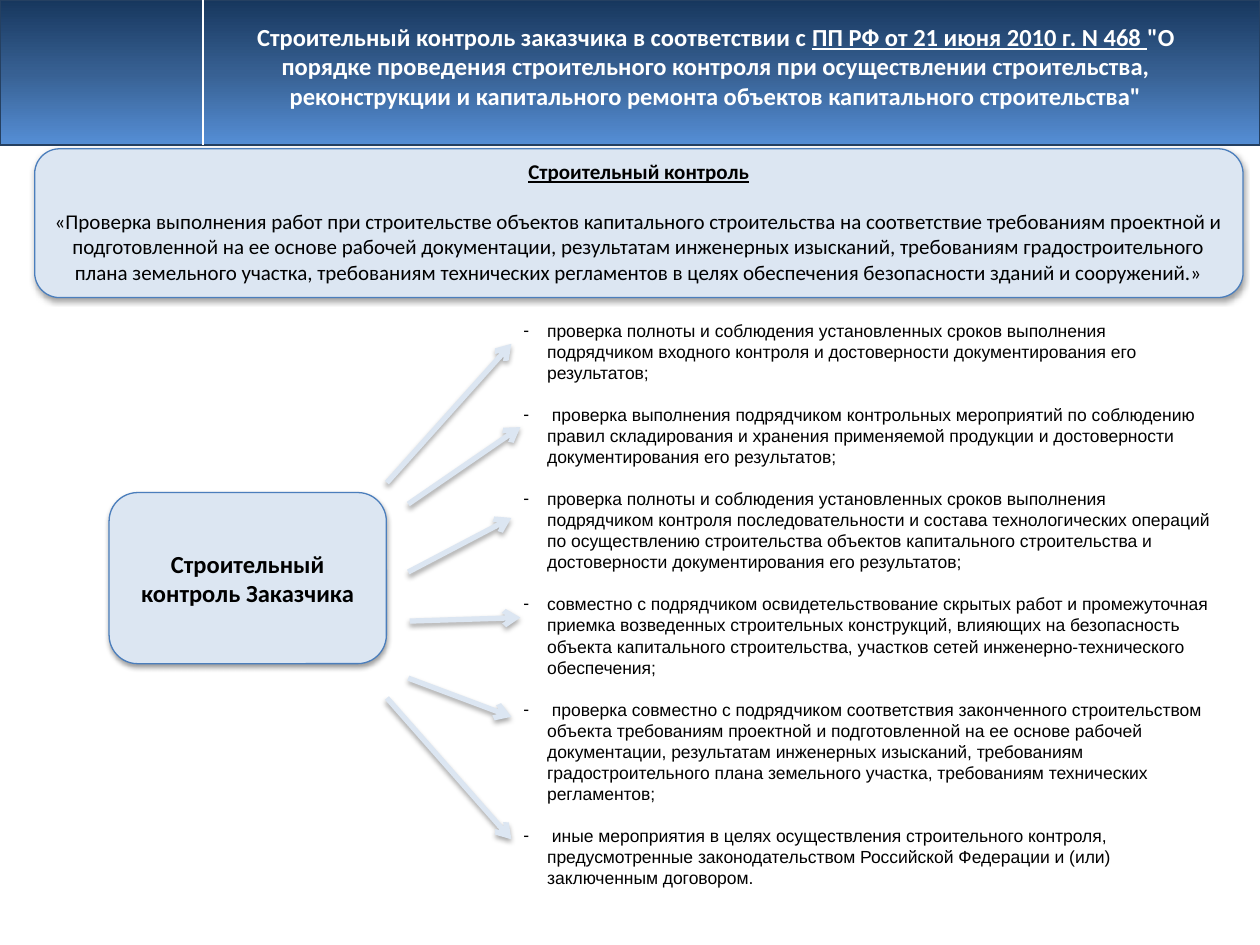
from lxml import etree
from pptx import Presentation
from pptx import util as u
from pptx.dml.color import RGBColor
from pptx.enum import shapes, text
from pptx.oxml import ns, parse_xml

COLORS = {
    "top": "17375E", "middle": "376092", "bottom": "558ED5", "edge": "254061",
    "white": "FFFFFF", "black": "000000", "pale": "DCE6F2", "outline": "4B7EBC",
}
DUTIES = [
    "проверка полноты и соблюдения установленных сроков выполнения подрядчиком входного контроля "
    "и достоверности документирования его результатов;",
    " проверка выполнения подрядчиком контрольных мероприятий по соблюдению правил складирования "
    "и хранения применяемой продукции и достоверности документирования его результатов;",
    "проверка полноты и соблюдения установленных сроков выполнения подрядчиком контроля "
    "последовательности и состава технологических операций по осуществлению строительства объектов "
    "капитального строительства и достоверности документирования его результатов;",
    "совместно с подрядчиком освидетельствование скрытых работ и промежуточная приемка возведенных "
    "строительных конструкций, влияющих на безопасность объекта капитального строительства, "
    "участков сетей инженерно-технического обеспечения;",
    " проверка совместно с подрядчиком соответствия законченного строительством объекта требованиям "
    "проектной и подготовленной на ее основе рабочей документации, результатам инженерных изысканий, "
    "требованиям градостроительного плана земельного участка, требованиям технических регламентов;",
    " иные мероприятия в целях осуществления строительного контроля, предусмотренные "
    "законодательством Российской Федерации и (или) заключенным договором.",
]
ARROWS = [
    (0, 2.8, 2.51, 0), (0.43, 3.23, 2.69, 1.68), (0.43, 4.6, 2.51, 3.51),
    (0.46, 5.59, 2.69, 5.52), (0.43, 6.74, 2.51, 7.52), (0, 7.14, 2.51, 9.99),
]


def rgb(name):
    """Return the named colour."""
    return RGBColor.from_string(COLORS[name])


def add_run(p, wording, size, color="black", font="Calibri", bold=False, underline=False):
    """Append one formatted run to a paragraph."""
    r = p.add_run()
    r.text = wording
    r.font.name, r.font.size = font, u.Pt(size)
    r.font.bold, r.font.underline = bold, underline
    r.font.color.rgb = rgb(color)


def set_line(s, color, width):
    """Give a shape or connector a solid line."""
    s.line.color.rgb = rgb(color)
    s.line.width = u.Pt(width)


def set_effect(s, alpha=0, dist=0):
    """Give a shape a soft shadow below it, or none when alpha is zero."""
    spPr = s._element.spPr
    for old in spPr.findall(ns.qn("a:effectLst")):
        spPr.remove(old)
    effects = etree.SubElement(spPr, ns.qn("a:effectLst"))
    if alpha:
        shadow = etree.SubElement(effects, ns.qn("a:outerShdw"), blurRad=str(u.Pt(3.1)),
                                  dist=str(u.Pt(dist)), dir="5400000", rotWithShape="0")
        color = etree.SubElement(shadow, ns.qn("a:srgbClr"), val=COLORS["black"])
        etree.SubElement(color, ns.qn("a:alpha"), val=str(alpha * 1000))


def add_line(slide, x1, y1, x2, y2, color, width):
    """Add a straight connector between two points in centimetres."""
    s = slide.shapes.add_connector(shapes.MSO_CONNECTOR.STRAIGHT, *map(u.Cm, (x1, y1, x2, y2)))
    set_line(s, color, width)
    set_effect(s)
    return s


def add_text_frame(slide, x, y, w, h):
    """Add a wrapping text box and return its frame."""
    tf = slide.shapes.add_textbox(*map(u.Cm, (x, y, w, h))).text_frame
    tf.word_wrap = True
    return tf


def add_header(slide, x, y, w, h):
    """Draw the gradient header with its divider and title."""
    s = slide.shapes.add_shape(shapes.MSO_SHAPE.RECTANGLE, *map(u.Cm, (x, y, w, h)))
    stops = "".join(f'<a:gs pos="{pos}"><a:srgbClr val="{COLORS[name]}"/></a:gs>'
                    for pos, name in ((0, "top"), (50000, "middle"), (100000, "bottom")))
    s._element.spPr.insert(2, parse_xml(
        f'<a:gradFill {ns.nsdecls("a")}><a:gsLst>{stops}</a:gsLst>'
        '<a:lin ang="5400000" scaled="0"/></a:gradFill>'))
    set_line(s, "edge", 1)
    set_effect(s)
    add_line(slide, x + 4.09, y, x + 4.09, y + h, "white", 1.25)
    p = add_text_frame(slide, x + 4.43, y + 0.32, 20, 2.64).paragraphs[0]
    p.alignment = text.PP_ALIGN.CENTER
    add_run(p, "Строительный контроль заказчика в соответствии с ", 14, "white", bold=True)
    add_run(p, "ПП РФ от 21 июня 2010 г. N 468 ", 14, "white", bold=True, underline=True)
    add_run(p, "\"О порядке проведения строительного контроля при осуществлении строительства, "
               "реконструкции и капитального ремонта объектов капитального строительства\"",
            14, "white", bold=True)


def add_card(slide, x, y, w, h):
    """Add a pale rounded card with a shadow and return its text frame."""
    s = slide.shapes.add_shape(shapes.MSO_SHAPE.ROUNDED_RECTANGLE, *map(u.Cm, (x, y, w, h)))
    s.fill.solid()
    s.fill.fore_color.rgb = rgb("pale")
    set_line(s, "outline", 0.75)
    set_effect(s, 38, 1.6)
    tf = s.text_frame
    tf.word_wrap = True
    tf.vertical_anchor = text.MSO_ANCHOR.MIDDLE
    tf.paragraphs[0].alignment = text.PP_ALIGN.CENTER
    return tf


def add_definition(slide, x, y, w, h):
    """Add the card that defines construction control."""
    tf = add_card(slide, x, y, w, h)
    tf.margin_bottom = u.Cm(0.19)
    add_run(tf.paragraphs[0], "Строительный контроль", 12, bold=True, underline=True)
    p = tf.add_paragraph()
    p.alignment = text.PP_ALIGN.CENTER
    p.space_before = u.Pt(14.2)
    add_run(p, "«Проверка выполнения работ при строительстве объектов капитального строительства на "
               "соответствие требованиям проектной и подготовленной на ее основе рабочей документации, "
               "результатам инженерных изысканий, требованиям градостроительного плана земельного "
               "участка, требованиям технических регламентов в целях обеспечения безопасности зданий "
               "и сооружений.»", 12)


def add_hub(slide, x, y, w, h):
    """Add the card from which the arrows fan out."""
    p = add_card(slide, x, y, w, h).paragraphs[0]
    add_run(p, "Строительный контроль Заказчика", 14, bold=True)


def add_duties(slide, x, y, w, h):
    """Add the dashed list of duties."""
    tf = add_text_frame(slide, x, y, w, h)
    for i, duty in enumerate(DUTIES):
        p = tf.add_paragraph() if i else tf.paragraphs[0]
        pPr = p._p.get_or_add_pPr()
        pPr.set("marL", str(u.Cm(0.48)))
        pPr.set("indent", str(u.Cm(-0.48)))
        etree.SubElement(pPr, ns.qn("a:buFont"), typeface="Arial")
        etree.SubElement(pPr, ns.qn("a:buChar"), char="-")
        if i:
            p.space_before = u.Pt(12)
        add_run(p, duty, 10, font="Arial")


def add_arrows(slide, x, y):
    """Fan the arrows out from the hub to the duties."""
    for x1, y1, x2, y2 in ARROWS:
        s = add_line(slide, x + x1, y + y1, x + x2, y + y2, "pale", 3)
        etree.SubElement(s.line._get_or_add_ln(), ns.qn("a:tailEnd"), type="arrow")
        set_effect(s, 35, 1.8)


def main():
    """Build and save the slide."""
    prs = Presentation()
    prs.slide_width, prs.slide_height = u.Cm(25.4), u.Cm(19.05)
    slide = prs.slides.add_slide(prs.slide_layouts[6])
    add_header(slide, 0, 0, 25.4, 2.92)
    add_definition(slide, 0.7, 3, 24.36, 3)
    add_hub(slide, 2.2, 9.93, 5.59, 3.45)
    add_duties(slide, 10.3, 6.33, 14.43, 12.22)
    add_arrows(slide, 7.8, 6.93)
    prs.save("out.pptx")


if __name__ == "__main__":
    main()
